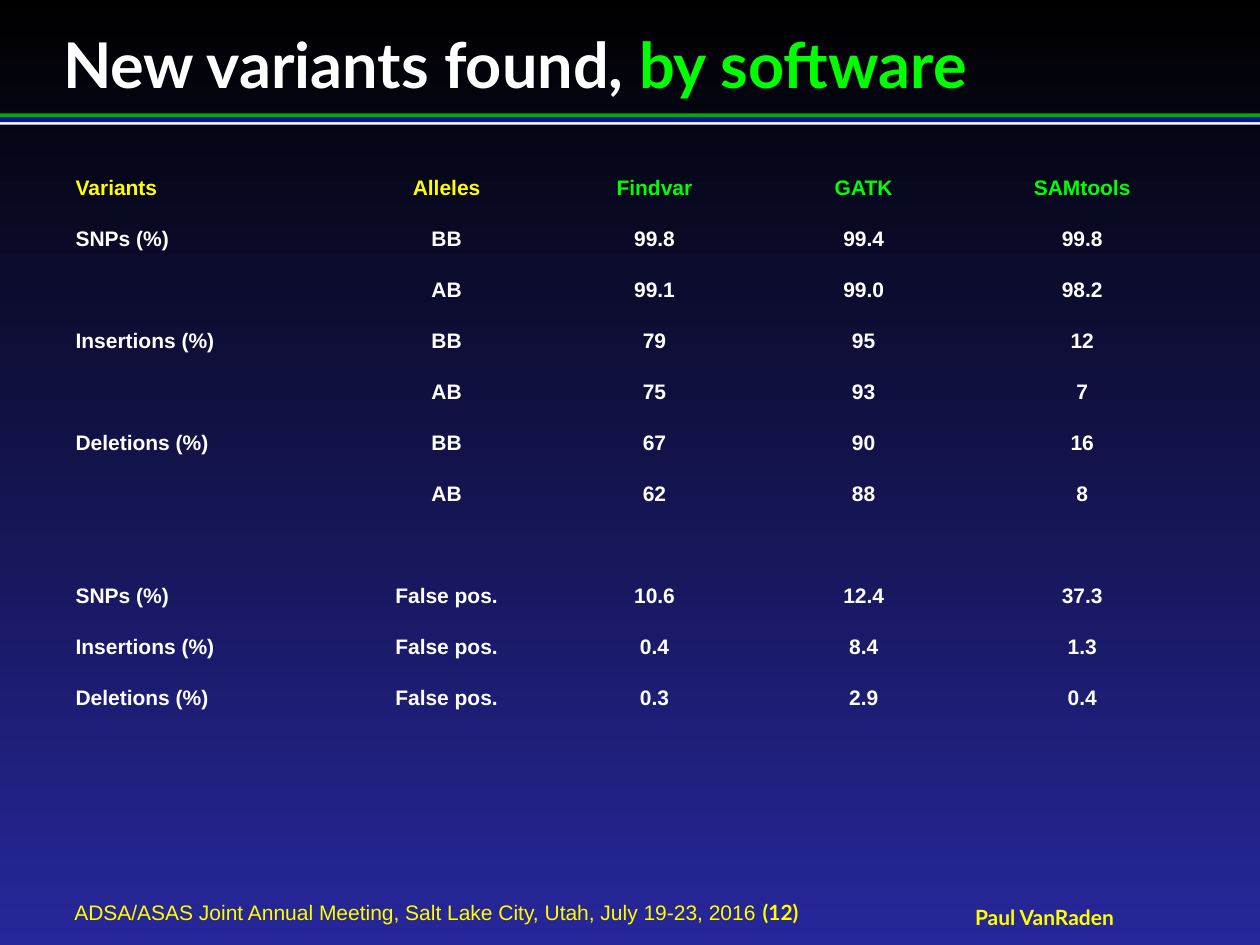
from pptx import Presentation
from pptx.dml.color import RGBColor
from pptx.enum.shapes import MSO_SHAPE
from pptx.enum.text import MSO_ANCHOR, MSO_AUTO_SIZE, PP_ALIGN
from pptx.util import Inches, Pt

RECT = MSO_SHAPE.RECTANGLE
TOP, MIDDLE = MSO_ANCHOR.TOP, MSO_ANCHOR.MIDDLE
NO_FIT = MSO_AUTO_SIZE.NONE
LEFT, CENTER = PP_ALIGN.LEFT, PP_ALIGN.CENTER

BLACK = RGBColor(0x00, 0x00, 0x00)
NAVY = RGBColor(0x27, 0x27, 0x9B)
WHITE = RGBColor(0xFF, 0xFF, 0xFF)
YELLOW = RGBColor(0xFF, 0xFF, 0x00)
LIME = RGBColor(0x00, 0xFF, 0x00)
GREEN = RGBColor(0x01, 0xAF, 0x00)
BLUE = RGBColor(0x00, 0x17, 0x99)
NO_GRID_STYLE = "{2D5ABB26-0587-4C30-8999-92F81FD0307C}"

ROWS = [
    ("Variants", "Alleles", "Findvar", "GATK", "SAMtools"),
    ("SNPs (%)", "BB", "99.8", "99.4", "99.8"),
    ("", "AB", "99.1", "99.0", "98.2"),
    ("Insertions (%)", "BB", "79", "95", "12"),
    ("", "AB", "75", "93", "7"),
    ("Deletions (%)", "BB", "67", "90", "16"),
    ("", "AB", "62", "88", "8"),
    ("", "", "", "", ""),
    ("SNPs (%)", "False pos.", "10.6", "12.4", "37.3"),
    ("Insertions (%)", "False pos.", "0.4", "8.4", "1.3"),
    ("Deletions (%)", "False pos.", "0.3", "2.9", "0.4"),
]
COL_WIDTHS = [2.22, 1.65, 1.65, 1.67, 1.8]


def set_font(font, name, size, color, bold):
    font.name = name
    font.size = Pt(size)
    font.color.rgb = color
    font.bold = bold


def set_frame(tf, anchor, wrap):
    """Remove the insets and fix the anchor and wrapping of a text frame."""
    tf.margin_left = tf.margin_top = tf.margin_right = tf.margin_bottom = 0
    tf.vertical_anchor = anchor
    tf.auto_size = NO_FIT
    tf.word_wrap = wrap


prs = Presentation()
prs.slide_width, prs.slide_height = Inches(10), Inches(7.5)
s = prs.slides.add_slide(prs.slide_layouts[5])

# Background
fill = s.background.fill
fill.gradient()
fill.gradient_angle = 270
for stop, color in zip(fill.gradient_stops, (BLACK, NAVY)):
    stop.color.rgb = color

# Rule under the title
for y, h, color in [(0.9, 0.03, GREEN), (0.96, 0.03, WHITE), (0.93, 0.04, BLUE)]:
    sp = s.shapes.add_shape(RECT, 0, Inches(y), prs.slide_width, Inches(h))
    sp.shadow.inherit = False
    sp.fill.solid()
    sp.fill.fore_color.rgb = color
    sp.line.fill.background()

# Title
title = s.shapes.title
title.left, title.top = Inches(0.5), Inches(0.2)
title.width, title.height = Inches(9), Inches(0.6)
set_frame(title.text_frame, TOP, True)
p = title.text_frame.paragraphs[0]
p.alignment = LEFT
for text, color in [("New variants found, ", WHITE), ("by software", LIME)]:
    r = p.add_run()
    r.text = text
    set_font(r.font, "Lato", 36, color, True)

# Results table
frame = s.shapes.add_table(len(ROWS), len(COL_WIDTHS), Inches(0.5), Inches(1.35),
                           Inches(9), Inches(4.46))
table = frame.table
table.first_row = table.horz_banding = False
frame._element.xpath(".//a:tableStyleId")[0].text = NO_GRID_STYLE
for col, width in zip(table.columns, COL_WIDTHS):
    col.width = Inches(width)
for i, row in enumerate(ROWS):
    for j, text in enumerate(row):
        cell = table.cell(i, j)
        cell.fill.background()
        cell.text = text
        p = cell.text_frame.paragraphs[0]
        p.alignment = LEFT if j == 0 else CENTER
        color = WHITE if i else YELLOW if j < 2 else LIME
        set_font(p.font, "Arial", 12, color, True)

# Footer
meeting = s.shapes.add_textbox(Inches(0.59), Inches(7.14), Inches(6.8), Inches(0.2))
set_frame(meeting.text_frame, MIDDLE, True)
p = meeting.text_frame.paragraphs[0]
for text, name, bold in [
    ("ADSA/ASAS Joint Annual Meeting, Salt Lake City, Utah, July 19-23, 2016 ", "Arial", False),
    ("(12)", "Lato", True),
]:
    r = p.add_run()
    r.text = text
    set_font(r.font, name, 12, YELLOW, bold)

author = s.shapes.add_textbox(Inches(7.69), Inches(7.18), Inches(1.2), Inches(0.2))
set_frame(author.text_frame, MIDDLE, False)
p = author.text_frame.paragraphs[0]
p.text = "Paul VanRaden"
p.alignment = CENTER
set_font(p.font, "Lato", 12, YELLOW, True)

prs.save("out.pptx")
